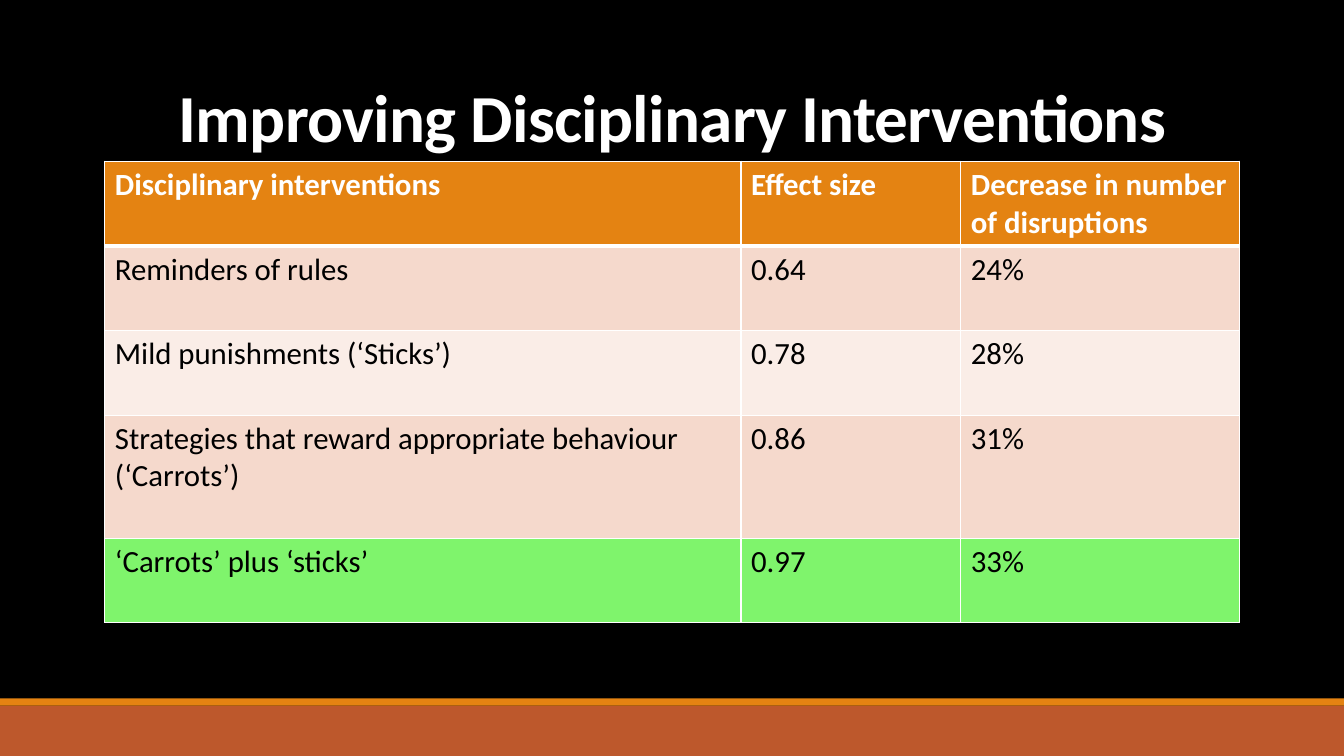
import pptx
import pptx.util
import pptx.dml.color
import pptx.enum.shapes
import pptx.enum.text
import pptx.oxml.ns
import lxml.etree
from pptx.util import Inches

FONT = "Calibri"
WHITE = "FFFFFF"
BLACK = "000000"
ORANGE = "E48312"
RUST = "BD582C"
PEACH = "F5D9CC"
PALE_PEACH = "FAEDE7"
GREEN = "7FF46C"

INTERVENTIONS = [
    ("Disciplinary interventions", "Effect size", "Decrease in number of disruptions"),
    ("Reminders of rules", "0.64", "24%"),
    ("Mild punishments (‘Sticks’)", "0.78", "28%"),
    ("Strategies that reward appropriate behaviour (‘Carrots’)", "0.86", "31%"),
    ("‘Carrots’ plus ‘sticks’", "0.97", "33%"),
]
ROW_FILLS = [ORANGE, PEACH, PALE_PEACH, PEACH, GREEN]
ROW_HEIGHTS = [0.84, 0.84, 0.84, 1.22, 0.84]
COLUMN_WIDTHS = [6.31, 2.18, 2.76]


def color(value):
    return pptx.dml.color.RGBColor.from_string(value)


def paint(part, value):
    part.fill.solid()
    part.fill.fore_color.rgb = color(value)


def add_run(paragraph, text, size, value, bold):
    run = paragraph.add_run()
    run.text = text
    run.font.name = FONT
    run.font.size = pptx.util.Pt(size)
    run.font.bold = bold
    run.font.color.rgb = color(value)
    return run


def add_footer(slide, left, top, width, height):
    stripe_height = 0.07
    bands = [
        (top + stripe_height, height - stripe_height, RUST),
        (top, stripe_height, ORANGE),
    ]
    for band_top, band_height, value in bands:
        band = slide.shapes.add_shape(
            pptx.enum.shapes.MSO_SHAPE.RECTANGLE,
            Inches(left), Inches(band_top), Inches(width), Inches(band_height))
        band.shadow.inherit = False
        paint(band, value)
        band.line.fill.background()


def add_title(slide, left, top, width, height):
    title = slide.shapes.add_textbox(
        Inches(left), Inches(top), Inches(width), Inches(height))
    frame = title.text_frame
    frame.word_wrap = True
    frame.vertical_anchor = pptx.enum.text.MSO_ANCHOR.BOTTOM
    heading = frame.paragraphs[0]
    heading.alignment = pptx.enum.text.PP_ALIGN.CENTER
    heading.line_spacing = 0.85
    run = add_run(heading, "Improving Disciplinary Interventions", 48, WHITE, True)
    run.font._element.set("spc", "-50")


def add_borders(cell, top_width, bottom_width):
    properties = cell._tc.get_or_add_tcPr()
    qn = pptx.oxml.ns.qn
    sides = [("a:lnL", 1), ("a:lnR", 1), ("a:lnT", top_width), ("a:lnB", bottom_width)]
    for position, (side, points) in enumerate(sides):
        border = lxml.etree.Element(qn(side), w=str(pptx.util.Pt(points)))
        fill = lxml.etree.SubElement(border, qn("a:solidFill"))
        lxml.etree.SubElement(fill, qn("a:srgbClr"), val=WHITE)
        properties.insert(position, border)


def add_interventions(slide, left, top, width, height):
    table = slide.shapes.add_table(
        len(INTERVENTIONS), len(COLUMN_WIDTHS),
        Inches(left), Inches(top), Inches(width), Inches(height)).table
    for column, column_width in zip(table.columns, COLUMN_WIDTHS):
        column.width = Inches(column_width)
    for row_index, (row, row_height) in enumerate(zip(table.rows, ROW_HEIGHTS)):
        row.height = Inches(row_height)
        header = row_index == 0
        for cell, text in zip(row.cells, INTERVENTIONS[row_index]):
            paint(cell, ROW_FILLS[row_index])
            add_borders(cell, 3 if row_index == 1 else 1, 3 if header else 1)
            add_run(cell.text_frame.paragraphs[0], text, 22,
                    WHITE if header else BLACK, header)


def main():
    deck = pptx.Presentation()
    deck.slide_width = Inches(13.33)
    deck.slide_height = Inches(7.5)
    slide = deck.slides.add_slide(deck.slide_layouts[6])
    paint(slide.background, BLACK)
    add_footer(slide, 0, 6.93, 13.33, 0.57)
    add_title(slide, 0.92, 0.15, 11.5, 1.45)
    add_interventions(slide, 1.04, 1.6, sum(COLUMN_WIDTHS), sum(ROW_HEIGHTS))
    deck.save("out.pptx")


if __name__ == "__main__":
    main()
